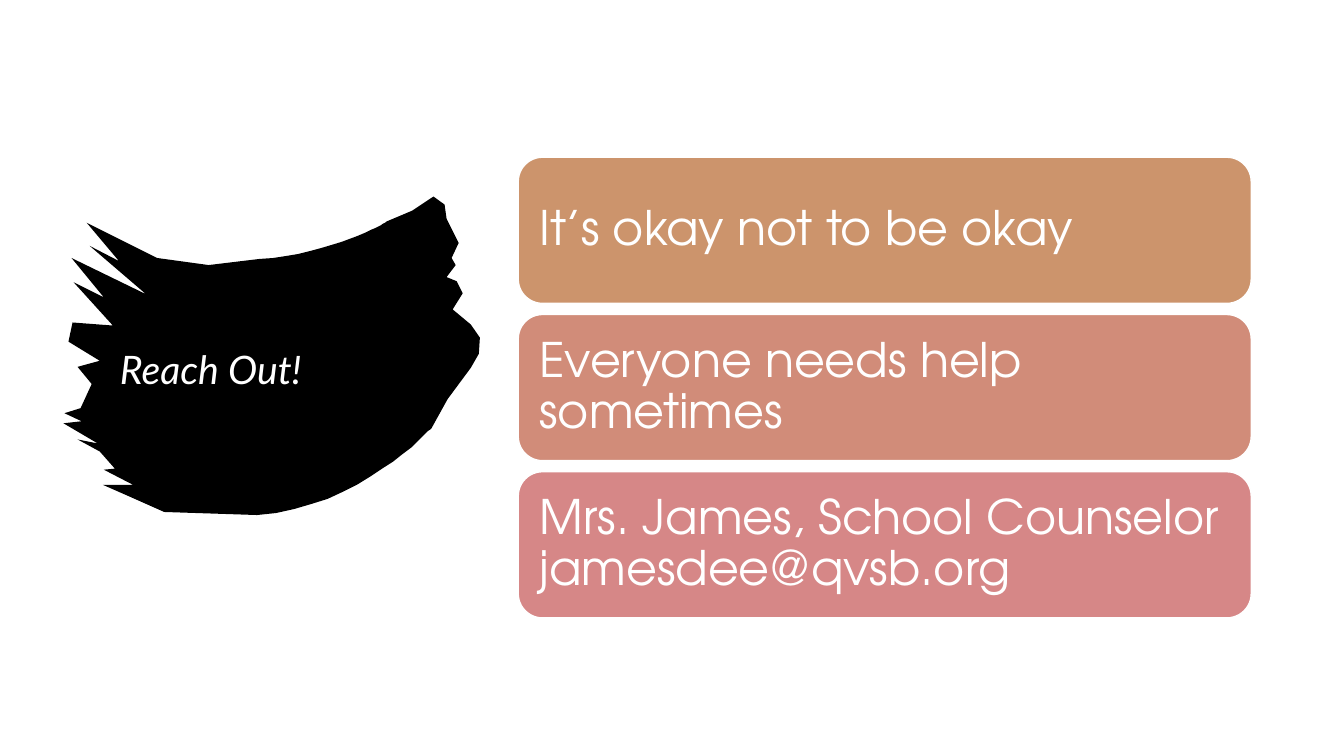
from pptx import Presentation
from pptx.dml.color import RGBColor as Rgb
from pptx.enum.shapes import MSO_SHAPE as Kind
from pptx.enum.text import MSO_ANCHOR as Anchor, MSO_AUTO_SIZE as Fit, PP_ALIGN as Align
from pptx.util import Inches, Pt

HEX = {"ink": "000000", "paper": "FFFFFF",
       "tan": "CC946C", "clay": "D18C79", "rose": "D68787"}

# The grid has cells of one inch; the brush outline uses hundredths of a cell.
CELL = Inches(1)
FINE = CELL / 100

CARDS = [("It’s okay not to be okay", "tan"),
         ("Everyone needs help sometimes", "clay"),
         ("Mrs. James, School Counselor jamesdee@qvsb.org", "rose")]

# Brush outline, clockwise: a pair is a corner, six numbers are a curve.
BRUSH = [
    # right edge
    (430, 195), (441, 203), (443, 217), (455, 241), (448, 256), (452, 263),
    (443, 275), (453, 279), (459, 291), (449, 307), (467, 322), (476, 335),
    (475, 351), (467, 365), (444, 396), (428, 425),
    # lower sweep
    (427, 425, 357, 504, 255, 511), (163, 508), (127, 492),
    # left bristles
    (102, 481), (132, 481), (103, 466), (114, 465), (99, 448), (77, 436),
    (97, 440), (63, 420), (81, 418), (64, 410), (80, 405), (91, 381),
    (77, 364), (99, 358), (68, 339), (72, 320), (112, 323), (73, 280),
    (103, 295), (71, 256), (145, 292), (89, 244), (118, 259), (86, 221),
    # upper sweep
    (156, 256), (207, 263), (257, 257), (332, 251, 381, 222, 383, 220),
    (409, 209),
]


def grid(*cells):
    return [round(n * CELL) for n in cells]


def trace(steps, parts=16):
    """Turn corners and curves into a plain list of points."""
    pts = []
    for step in steps:
        if len(step) == 2:
            pts.append(step)
            continue
        ends = [pts[-1], step[:2], step[2:4], step[4:]]
        for i in range(1, parts + 1):
            t = i / parts
            share = [(1 - t) ** 3, 3 * t * (1 - t) ** 2, 3 * t * t * (1 - t), t ** 3]
            pts.append(tuple(sum(s * p[axis] for s, p in zip(share, ends))
                             for axis in (0, 1)))
    return pts


def paint(shape, fill, line=None):
    shape.shadow.inherit = False
    shape.fill.solid()
    shape.fill.fore_color.rgb = Rgb.from_string(HEX[fill])
    if line:
        shape.line.color.rgb = Rgb.from_string(HEX[line])
        shape.line.width = Pt(1)
    else:
        shape.line.fill.background()


def write(shape, text, face, size, slant=False):
    frame = shape.text_frame
    frame.word_wrap = True
    frame.auto_size = Fit.NONE
    frame.vertical_anchor = Anchor.MIDDLE
    para = frame.paragraphs[0]
    para.alignment = Align.LEFT
    para.line_spacing = 0.9
    run = para.add_run()
    run.text = text
    font = run.font
    font.name, font.size, font.italic = face, Pt(size), slant
    font.color.rgb = Rgb.from_string(HEX["paper"])


def brush(slide):
    first, *rest = trace(BRUSH)
    pen = slide.shapes.build_freeform(*first, scale=FINE)
    pen.add_line_segments(rest, close=True)
    shape = pen.convert_to_shape()
    paint(shape, "ink")
    return shape


def head(slide, text):
    title = slide.shapes.title
    title.left, title.top, title.width, title.height = grid(1.09, 2.87, 3.29, 1.64)
    write(title, text, "Lato", 28, slant=True)
    return title


def card(slide, row, text, fill):
    box = grid(5.14, 1.56 + row * 1.56, 7.27, 1.45)
    shape = slide.shapes.add_shape(Kind.ROUNDED_RECTANGLE, *box)
    paint(shape, fill, "paper")
    frame = shape.text_frame
    frame.margin_left = frame.margin_right = Inches(0.14)
    frame.margin_top = frame.margin_bottom = Inches(0.14)
    write(shape, text, "TeX Gyre Adventor", 34)


def main():
    deck = Presentation()
    deck.slide_width, deck.slide_height = grid(13.33, 7.5)
    slide = deck.slides.add_slide(deck.slide_layouts[5])

    # Title on top of the brush stroke
    title = head(slide, "Reach Out!")
    title.element.addprevious(brush(slide).element)

    # Stack of messages
    for row, (text, fill) in enumerate(CARDS):
        card(slide, row, text, fill)

    deck.save("out.pptx")


if __name__ == "__main__":
    main()
